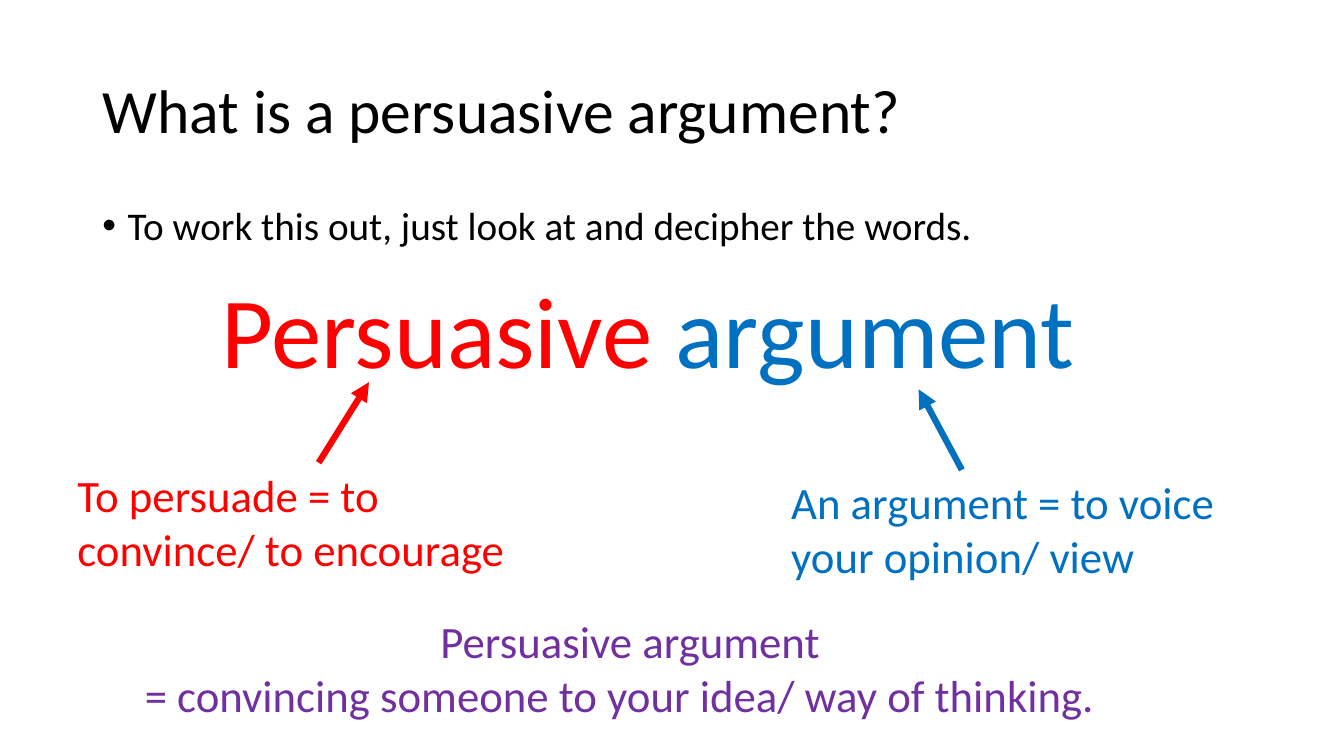
from lxml import etree
from pptx import Presentation
from pptx import util as u
from pptx.dml.color import RGBColor
from pptx.enum import shapes, text
from pptx.oxml import ns

FONT = "Calibri"
COLOURS = {
    "ink": "000000",
    "persuade": "FF0000",
    "argument": "0070C0",
    "summary": "7030A0",
}


def colour(name):
    return RGBColor.from_string(COLOURS[name])


def place(shape, box):
    shape.left, shape.top, shape.width, shape.height = [u.Cm(length) for length in box]


def add_span(para, words, size, name):
    span = para.add_run()
    span.text = words
    span.font.name = FONT
    span.font.size = u.Pt(size)
    span.font.color.rgb = colour(name)


def add_text_box(page, box):
    shape = page.shapes.add_textbox(*[u.Cm(length) for length in box])
    shape.text_frame.word_wrap = True
    return shape.text_frame


def add_title(page, box, words):
    title = page.shapes.title
    place(title, box)
    frame = title.text_frame
    frame.auto_size = text.MSO_AUTO_SIZE.NONE
    frame.vertical_anchor = text.MSO_ANCHOR.MIDDLE
    para = frame.paragraphs[0]
    para.alignment = text.PP_ALIGN.LEFT
    para.line_spacing = 0.9
    add_span(para, words, 44, "ink")


def add_bullet(page, box, words):
    para = add_text_box(page, box).paragraphs[0]
    para.line_spacing = 0.9
    para.space_before = u.Pt(10)
    add_span(para, words, 28, "ink")
    props = para._p.get_or_add_pPr()
    props.set("marL", str(u.Cm(0.635)))
    props.set("indent", str(u.Cm(-0.635)))
    etree.SubElement(props, ns.qn("a:buFont"), typeface="Arial")
    etree.SubElement(props, ns.qn("a:buChar"), char="•")


def add_key_phrase(page, box):
    para = add_text_box(page, box).paragraphs[0]
    add_span(para, "Persuasive ", 72, "persuade")
    add_span(para, "argument", 72, "argument")


def add_arrow(page, start, end, name):
    points = [u.Cm(length) for length in (*start, *end)]
    arrow = page.shapes.add_connector(shapes.MSO_CONNECTOR.STRAIGHT, *points)
    arrow.line.color.rgb = colour(name)
    arrow.line.width = u.Pt(4.5)
    etree.SubElement(arrow.line._get_or_add_ln(), ns.qn("a:tailEnd"), type="triangle")
    etree.SubElement(arrow._element.spPr, ns.qn("a:effectLst"))


def add_definition(page, box, words, name, arrow_inset, arrow_run):
    left, top = box[:2]
    start = left + arrow_inset, top
    end = start[0] + arrow_run, top - 2.03
    add_arrow(page, start, end, name)
    add_span(add_text_box(page, box).paragraphs[0], words, 32, name)


def add_summary(page, box):
    frame = add_text_box(page, box)
    heading = frame.paragraphs[0]
    heading.alignment = text.PP_ALIGN.CENTER
    add_span(heading, "Persuasive argument", 32, "summary")
    meaning = frame.add_paragraph()
    add_span(meaning, "= convincing someone to your idea/ way of thinking.", 32, "summary")


def main():
    deck = Presentation()
    deck.slide_width, deck.slide_height = u.Cm(33.87), u.Cm(19.05)
    page = deck.slides.add_slide(deck.slide_layouts.get_by_name("Title Only"))
    add_title(page, (2.33, 1.02, 29.21, 3.68), "What is a persuasive argument?")
    add_bullet(page, (2.33, 5.08, 29.21, 1.42),
               "To work this out, just look at and decipher the words.")
    add_key_phrase(page, (5.33, 6.63, 24.82, 3.33))
    add_definition(page, (1.7, 11.66, 12.12, 3),
                   "To persuade = to convince/ to encourage", "persuade", 6.33, 1.27)
    add_definition(page, (19.69, 11.84, 12.12, 3),
                   "An argument = to voice your opinion/ view", "argument", 4.55, -1.09)
    add_summary(page, (3.4, 15.34, 24.97, 3))
    deck.save("out.pptx")


if __name__ == "__main__":
    main()
